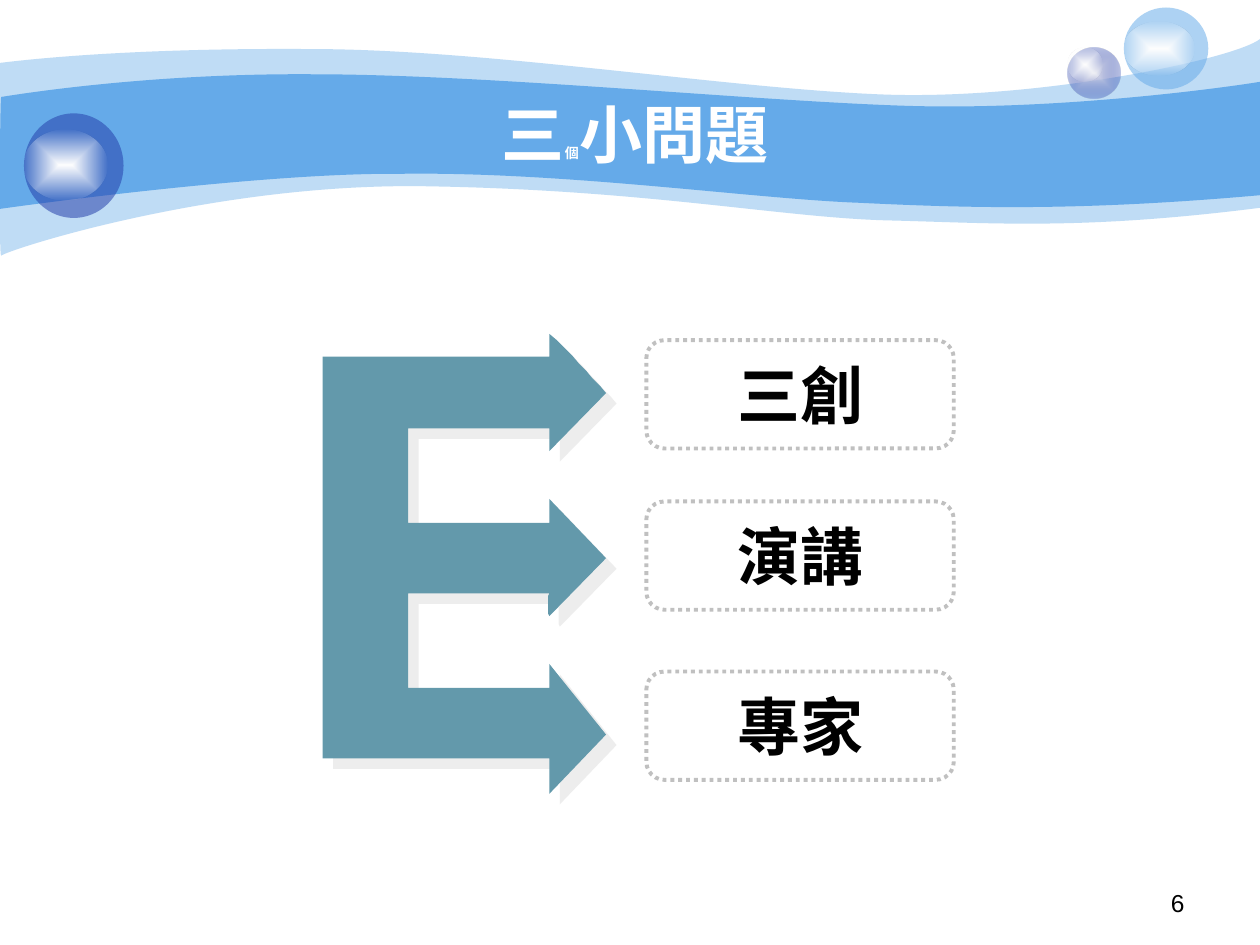
from lxml.etree import SubElement as Sub
from pptx import Presentation
from pptx.dml.color import RGBColor
from pptx.enum.dml import MSO_LINE
from pptx.enum.shapes import MSO_SHAPE as Kind
from pptx.enum.text import MSO_ANCHOR as Anchor, MSO_AUTO_SIZE as Fit, PP_ALIGN as Align
from pptx.oxml.ns import qn
from pptx.util import Inches, Pt

CJK = "Noto Sans CJK SC"
TITLE = [("三", 36), ("個", 8), ("小問題", 36)]
TOPICS = [("三創", 2.7), ("演講", 3.98), ("專家", 5.33)]
PAGE = "6"
SKY, NAVY, WHITE, TEAL = "65AAE9", "233DA9", "FFFFFF", "6399AB"
GLOW = [(0, WHITE, 100), (100, WHITE, 0)]
WAVES = [
    ((0, 0.5), [(0.24, 0.47, 1.07, 0.38, 2.47, 0.39), (3.86, 0.39, 5.75, 0.7, 6.99, 0.75),
                (8.22, 0.8, 9.8, 0.47, 10, 0.31), (10, 1.65),
                (8.58, 1.83, 7.87, 1.77, 7.05, 1.75), (6.22, 1.73, 5.15, 1.51, 3.43, 1.48),
                (1.72, 1.44, 0.04, 1.99, 0.01, 2.03), (-0.01, 2.08, 0, 0.75, 0, 0.5)], 41),
    ((0.01, 0.77), [(0.02, 0.77, 1.1, 0.58, 2.48, 0.59), (3.86, 0.59, 5.95, 0.8, 7.18, 0.84),
                    (8.41, 0.88, 9.76, 0.69, 10, 0.65), (10, 1.55),
                    (8.53, 1.68, 7.65, 1.65, 6.82, 1.61), (5.99, 1.58, 4.47, 1.36, 3.17, 1.38),
                    (2.03, 1.37, -0.02, 1.66, -0.01, 1.66), (0, 1.66, 0, 0.77, 0.01, 0.77)], 100),
]
BALLS = [
    ((8.47, 0.38, 0.42, 0.4), [(0, "E1E2ED", 100), (100, NAVY, 31)]),
    ((8.47, 0.38, 0.28, 0.27), GLOW),
    ((8.92, 0.06, 0.67, 0.65), [(0, SKY, 53)]),
    ((8.92, 0.17, 0.56, 0.43), GLOW),
    ((0.19, 0.9, 0.79, 0.83), [(0, NAVY, 53)]),
    ((0.19, 1.03, 0.66, 0.56), GLOW),
]
LEFT, STEM, NECK, TIP = 2.56, 3.24, 4.36, 4.81
SLOPE = [(4.42, 2.7), (4.48, 2.76), (4.54, 2.82), (4.59, 2.88), (4.65, 2.94), (4.7, 3), (4.76, 3.06)]
NICK = [(4.35, 4.87), (4.35, 4.8), (4.35, 4.73)]
ARROWS = [(2.65, 2.83, 3.12, 3.4, 3.58, SLOPE, []),
          (3.96, 4.15, 4.43, 4.71, 4.89, [], NICK),
          (5.27, 5.46, 5.83, 6.02, 6.3, [], [])]


def rgb(code):
    return RGBColor.from_string(code)


def tint(node, code, alpha):
    color = Sub(node, qn("a:srgbClr"), val=code)
    if alpha < 100:
        Sub(color, qn("a:alpha"), val=str(alpha * 1000))


def paint(shape, stops):
    shape.shadow.inherit = False
    shape.line.fill.background()
    if len(stops) == 1:
        _, code, alpha = stops[0]
        shape.fill.solid()
        shape.fill.fore_color.rgb = rgb(code)
        if alpha < 100:
            color = shape.fill._xPr.find(qn("a:solidFill"))[0]
            Sub(color, qn("a:alpha"), val=str(alpha * 1000))
        return
    shape.fill.gradient()
    grad = shape.fill._xPr.find(qn("a:gradFill"))
    for child in list(grad):
        grad.remove(child)
    ramp = Sub(grad, qn("a:gsLst"))
    for pos, code, alpha in stops:
        tint(Sub(ramp, qn("a:gs"), pos=str(pos * 1000)), code, alpha)
    way = Sub(grad, qn("a:path"), path="shape")
    Sub(way, qn("a:fillToRect"), **dict.fromkeys("ltrb", "50000"))


def outline(shapes, start, legs):
    pen = shapes.build_freeform(*map(Inches, start))
    spots = [leg[i:i + 2] for leg in legs for i in range(0, len(leg), 2)]
    pen.add_line_segments([tuple(map(Inches, spot)) for spot in spots], close=True)
    shape = pen.convert_to_shape()
    track = next(shape._element.iter(qn("a:path")))
    lines = iter(track.findall(qn("a:lnTo")))
    for leg in legs:
        head = next(lines)
        if len(leg) == 6:
            head.tag = qn("a:cubicBezTo")
            for _ in range(2):
                extra = next(lines)
                head.append(extra[0])
                track.remove(extra)
    return shape


def style(para, name, code, align, size=None, bold=None):
    para.alignment = align
    font = para.font
    font.name, font.bold, font.color.rgb = name, bold, rgb(code)
    if size:
        font.size = Pt(size)
    Sub(font._element, qn("a:ea"), typeface=name)


def place(shape, *box):
    shape.left, shape.top, shape.width, shape.height = map(Inches, box)


def main():
    """Build the three-questions slide."""
    deck = Presentation()
    deck.slide_width, deck.slide_height = Inches(10), Inches(7.5)
    slide = deck.slides.add_slide(deck.slide_layouts[5])
    shapes = slide.shapes

    for start, legs, alpha in WAVES:
        paint(outline(shapes, start, legs), [(0, SKY, alpha)])
    for box, stops in BALLS:
        paint(shapes.add_shape(Kind.OVAL, *map(Inches, box)), stops)

    title = shapes.title
    shapes._spTree.append(title._element)
    place(title, 1, 0.75, 8.08, 0.62)
    frame = title.text_frame
    frame.auto_size, frame.vertical_anchor = Fit.NONE, Anchor.MIDDLE
    para = frame.paragraphs[0]
    for text, size in TITLE:
        run = para.add_run()
        run.text, run.font.size = text, Pt(size)
    style(para, CJK, WHITE, Align.CENTER, bold=True)

    edge = []
    for top, upper, tip, lower, base, slope, nick in ARROWS:
        edge += [(STEM, upper), (NECK, upper), (NECK, top), *slope, (TIP, tip),
                 (NECK, base), *nick, (NECK, lower), (STEM, lower)]
    edge[-1] = (LEFT, ARROWS[-1][3])
    fork = outline(shapes, (LEFT, ARROWS[0][1]), edge[1:])
    paint(fork, [(0, TEAL, 100)])
    glow = fork._element.spPr.find(qn("a:effectLst"))
    cast = Sub(glow, qn("a:outerShdw"), dist=str(Pt(8.5)), dir="2700000", algn="ctr")
    tint(cast, "DDDDDD", 50)

    for text, top in TOPICS:
        card = shapes.add_shape(Kind.ROUNDED_RECTANGLE, *map(Inches, (5.13, top, 2.44, 0.86)))
        card.shadow.inherit = False
        card.fill.background()
        card.line.color.rgb, card.line.width = rgb("C0C0C0"), Pt(2.25)
        card.line.dash_style = MSO_LINE.ROUND_DOT
        frame = card.text_frame
        frame.text, frame.word_wrap, frame.vertical_anchor = text, False, Anchor.MIDDLE
        style(frame.paragraphs[0], CJK, "000000", Align.CENTER, 36, True)

    frame = shapes.add_textbox(*map(Inches, (7.17, 7, 2.33, 0.35))).text_frame
    frame.text, frame.word_wrap = PAGE, True
    style(frame.paragraphs[0], "Arial", "000000", Align.RIGHT, 14)
    deck.save("out.pptx")


if __name__ == "__main__":
    main()
